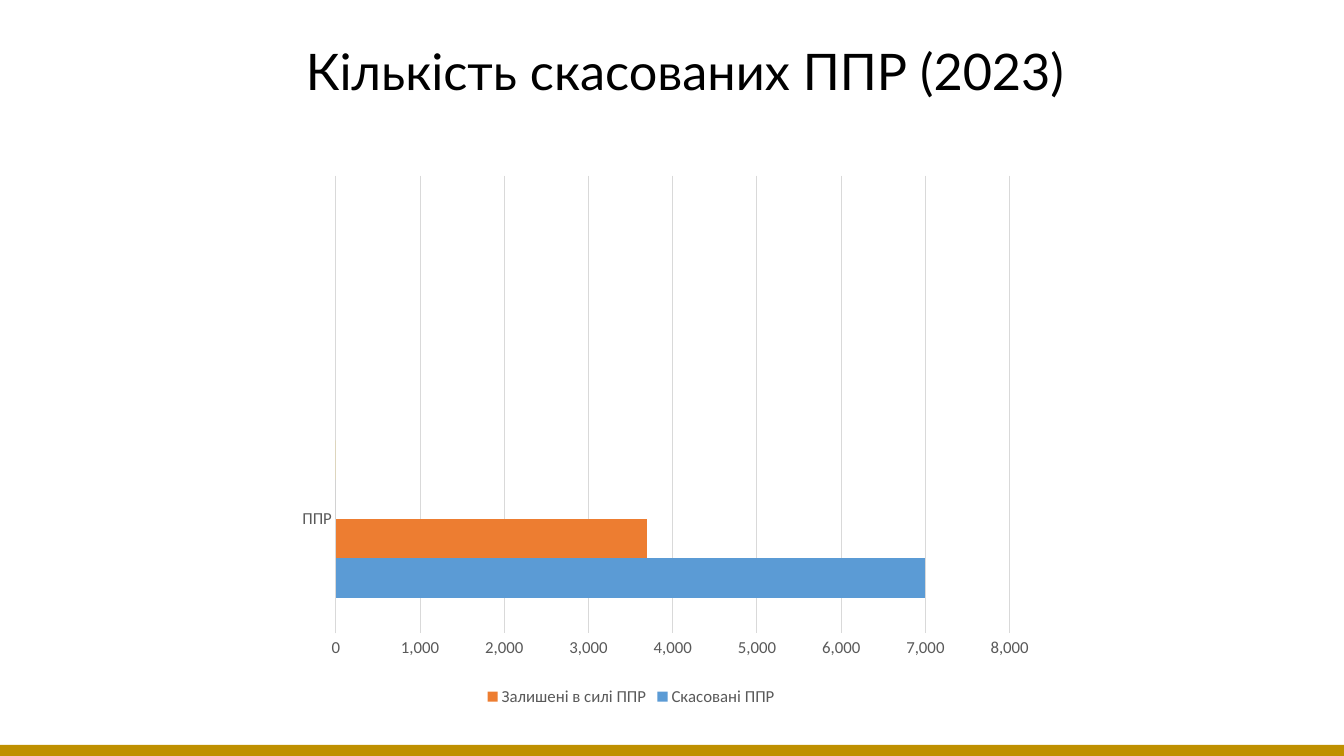
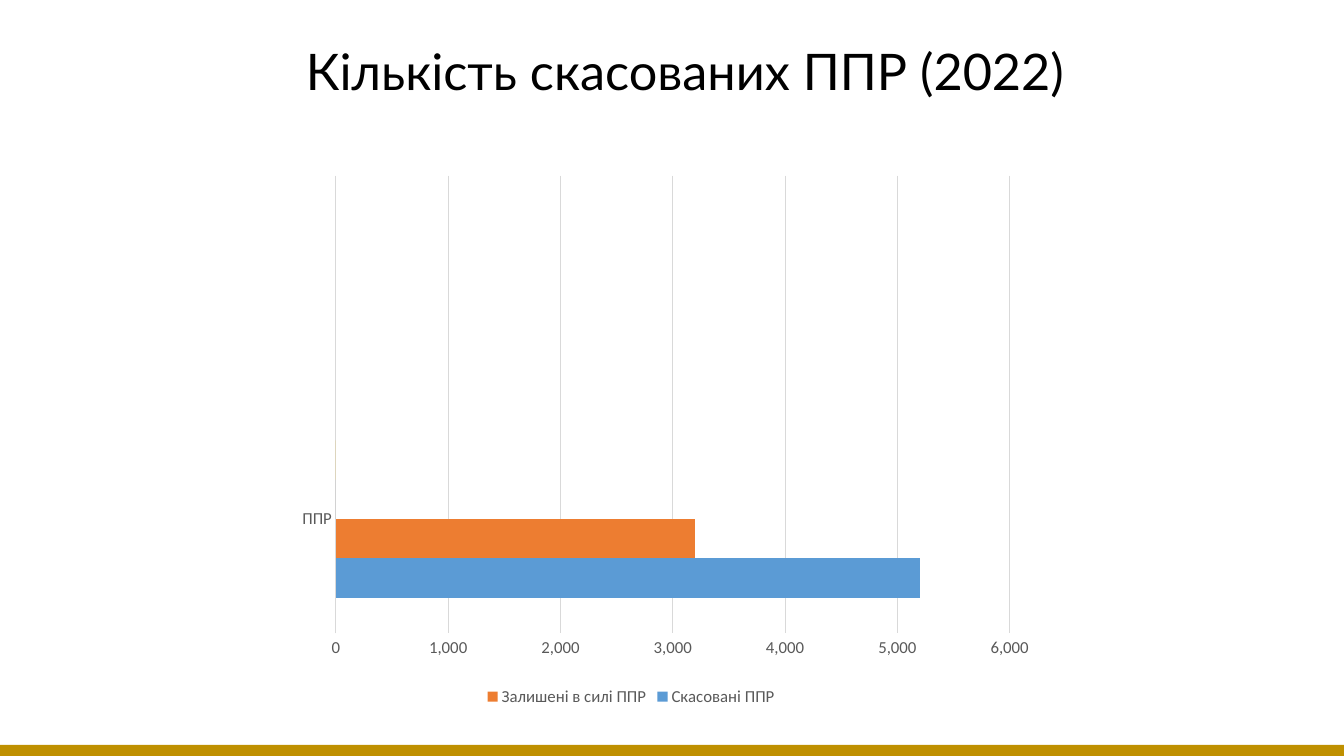
from lxml import etree
from pptx import Presentation
from pptx.chart.data import CategoryChartData
from pptx.dml.color import RGBColor
from pptx.enum.chart import XL_CHART_TYPE, XL_LEGEND_POSITION, XL_TICK_MARK
from pptx.enum.shapes import MSO_SHAPE
from pptx.enum.text import MSO_AUTO_SIZE, PP_ALIGN
from pptx.oxml.ns import qn
from pptx.util import Inches, Pt

BAR_CLUSTERED = XL_CHART_TYPE.BAR_CLUSTERED
LEGEND_BOTTOM = XL_LEGEND_POSITION.BOTTOM
NO_TICKS = XL_TICK_MARK.NONE
RECTANGLE = MSO_SHAPE.RECTANGLE
FIT_SHAPE = MSO_AUTO_SIZE.SHAPE_TO_FIT_TEXT
CENTER = PP_ALIGN.CENTER

SLIDE_WIDTH, SLIDE_HEIGHT = 13.33, 7.5
BLANK_LAYOUT = 6
BLACK, GOLD, GREY_TEXT, GRID_GREY = "000000", "BF9000", "595959", "D9D9D9"
TITLE_FONT = {"name": "Lato", "size": Pt(36)}
CHART_FONT = {"name": "Calibri", "size": Pt(12)}
PLOT_AREA = {"x": 0.142, "y": 0.028, "w": 0.817, "h": 0.832}
AXIS_STEP = 1000
HIDDEN_LEGEND_ENTRIES = (0, 1)
SERIES_STYLES = (
    ("Скасовані ППР", "5B9BD5"),
    ("Залишені в силі ППР", "ED7D31"),
    ("Інші 1", "A5A5A5"),
    ("Інші 2", "FFC000"),
)
# Year, series values, end of the value axis
YEARS = (
    (2023, (7000, 3700, 0, 0), 8000),
    (2022, (5200, 3200, 0, 0), 6000),
)


def rgb(color):
    return RGBColor.from_string(color)


def box(*lengths):
    return [Inches(length) for length in lengths]


def set_font(font, values, color):
    for name, value in values.items():
        setattr(font, name, value)
    font.color.rgb = rgb(color)


def set_line(line, color):
    line.color.rgb = rgb(color)
    line.width = Pt(0.75)


def add_title(slide, text):
    frame = slide.shapes.add_textbox(*box(2.78, 0.35, 8.03, 0.71)).text_frame
    frame.word_wrap = False
    frame.auto_size = FIT_SHAPE
    paragraph = frame.paragraphs[0]
    paragraph.alignment = CENTER
    run = paragraph.add_run()
    run.text = text
    set_font(run.font, TITLE_FONT, BLACK)


def add_footer_band(slide):
    height = 0.14
    top = 7.39
    band = slide.shapes.add_shape(RECTANGLE, *box(0, top, SLIDE_WIDTH, height))
    band.shadow.inherit = False
    band.fill.solid()
    band.fill.fore_color.rgb = rgb(GOLD)
    band.line.fill.background()


def fix_plot_area(chart):
    """Place the inner plot area at fixed fractions of the chart."""
    plot_area = chart._chartSpace.chart.plotArea
    for layout in plot_area.findall(qn("c:layout")):
        plot_area.remove(layout)
    layout = etree.Element(qn("c:layout"))
    manual = etree.SubElement(layout, qn("c:manualLayout"))
    settings = {"layoutTarget": "inner", "xMode": "edge", "yMode": "edge", **PLOT_AREA}
    for name, value in settings.items():
        etree.SubElement(manual, qn(f"c:{name}")).set("val", str(value))
    plot_area.insert(0, layout)


def add_legend(chart):
    chart.has_legend = True
    legend = chart.legend
    legend.position = LEGEND_BOTTOM
    legend.include_in_layout = False
    set_font(legend.font, CHART_FONT, GREY_TEXT)
    position = legend._element.find(qn("c:legendPos"))
    for index in reversed(HIDDEN_LEGEND_ENTRIES):
        entry = etree.Element(qn("c:legendEntry"))
        etree.SubElement(entry, qn("c:idx")).set("val", str(index))
        etree.SubElement(entry, qn("c:delete")).set("val", "1")
        position.addnext(entry)


def style_axes(chart, maximum):
    for axis in (chart.category_axis, chart.value_axis):
        axis.major_tick_mark = axis.minor_tick_mark = NO_TICKS
        set_font(axis.tick_labels.font, CHART_FONT, GREY_TEXT)
    set_line(chart.category_axis.format.line, GRID_GREY)

    value_axis = chart.value_axis
    value_axis.minimum_scale = 0
    value_axis.maximum_scale = maximum
    value_axis.major_unit = AXIS_STEP
    value_axis.tick_labels.number_format = "#,##0"
    value_axis.tick_labels.number_format_is_linked = False
    value_axis.format.line.fill.background()
    value_axis.has_major_gridlines = True
    set_line(value_axis.major_gridlines.format.line, GRID_GREY)


def add_bar_chart(slide, values, maximum):
    data = CategoryChartData(number_format="#,##0")
    data.categories = ["ППР", ""]
    for (name, _), value in zip(SERIES_STYLES, values):
        data.add_series(name, (value, None))
    frame = slide.shapes.add_chart(BAR_CLUSTERED, *box(2.17, 1.59, 8.18, 5.46), data)
    chart = frame.chart
    chart.has_title = False
    set_font(chart.font, CHART_FONT, GREY_TEXT)

    plot = chart.plots[0]
    plot.gap_width = 182
    plot.overlap = 0
    plot.vary_by_categories = False
    for series, (_, color) in zip(plot.series, SERIES_STYLES):
        series.format.fill.solid()
        series.format.fill.fore_color.rgb = rgb(color)

    style_axes(chart, maximum)
    add_legend(chart)
    fix_plot_area(chart)


def main():
    presentation = Presentation()
    presentation.slide_width, presentation.slide_height = box(SLIDE_WIDTH, SLIDE_HEIGHT)
    for year, values, maximum in YEARS:
        slide = presentation.slides.add_slide(presentation.slide_layouts[BLANK_LAYOUT])
        add_bar_chart(slide, values, maximum)
        add_title(slide, f"Кількість скасованих ППР ({year})")
        add_footer_band(slide)
    presentation.save("out.pptx")


if __name__ == "__main__":
    main()
